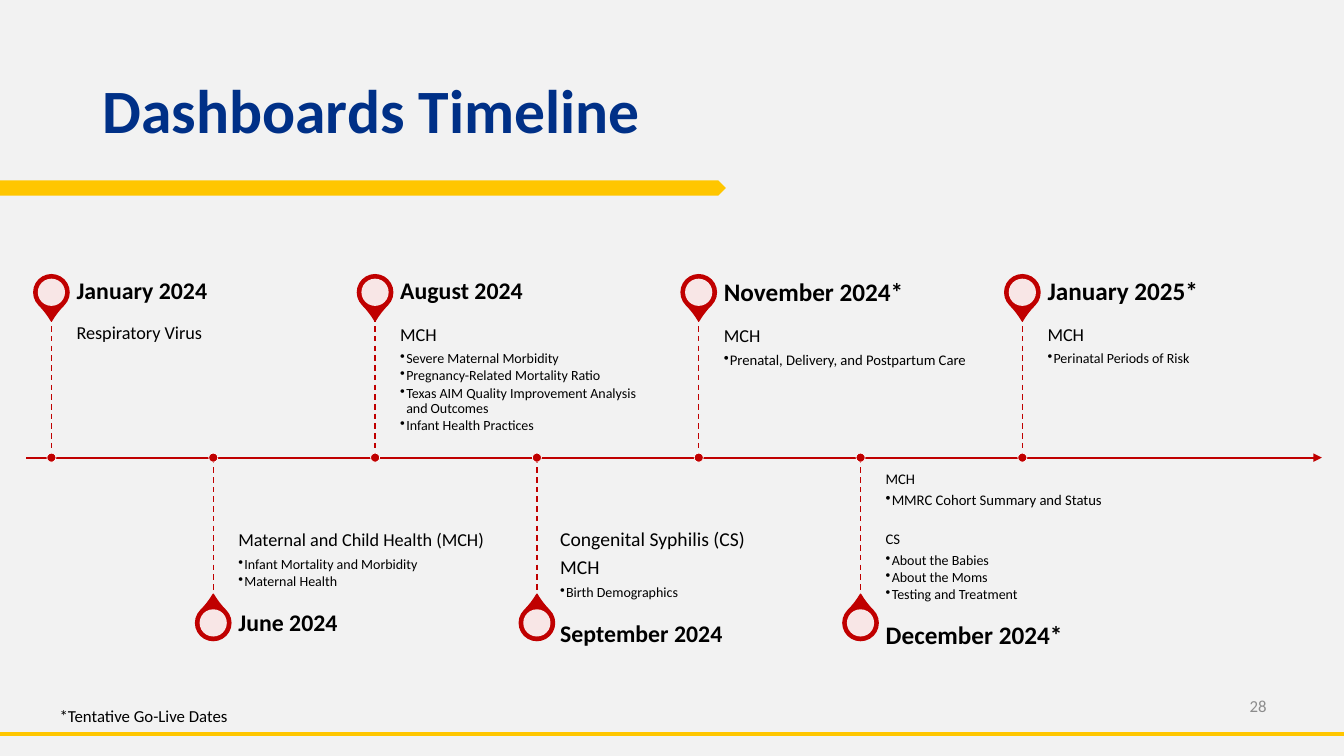
"""Build the Dashboards Timeline slide."""
import pptx
import pptx.util
import pptx.dml.color
import pptx.enum.dml
import pptx.enum.shapes
import pptx.enum.text
import pptx.oxml
import pptx.oxml.ns
from dataclasses import dataclass
from lxml import etree

Inches = pptx.util.Inches
Pt = pptx.util.Pt
RGBColor = pptx.dml.color.RGBColor
Shape = pptx.enum.shapes.MSO_SHAPE
Anchor = pptx.enum.text.MSO_ANCHOR
Align = pptx.enum.text.PP_ALIGN
qn = pptx.oxml.ns.qn


@dataclass(frozen=True)
class Theme:
    font: str = "Calibri"
    background: str = "F2F2F2"
    gold: str = "FFC600"
    navy: str = "003087"
    red: str = "C00000"
    white: str = "FFFFFF"
    black: str = "000000"
    gray: str = "8C8C8C"
    title: float = 44
    date: float = 17
    late_date: float = 18
    large_topic: float = 14
    topic: float = 13
    note: float = 12
    small_topic: float = 10.5
    detail: float = 10


theme = Theme()
deck = pptx.Presentation()
deck.slide_width, deck.slide_height = Inches(13.33), Inches(7.5)
slide = deck.slides.add_slide(deck.slide_layouts[6])
slide.background.fill.solid()
slide.background.fill.fore_color.rgb = RGBColor.from_string(theme.background)


def add_line(start, end, color, width):
    line = slide.shapes.add_connector(
        pptx.enum.shapes.MSO_CONNECTOR.STRAIGHT, *map(Inches, start + end))
    line.line.color.rgb = RGBColor.from_string(color)
    line.line.width = Pt(width)
    etree.SubElement(line._element.spPr, qn("a:effectLst"))
    return line


def add_text(box, rows, anchor=Anchor.MIDDLE, insets=(0.1, 0.05, 0.1, 0.05),
             color=theme.black, bold=False, align=Align.LEFT, spacing=0.9):
    frame = slide.shapes.add_textbox(*map(Inches, box)).text_frame
    frame.word_wrap = True
    frame.vertical_anchor = anchor
    (frame.margin_left, frame.margin_top,
     frame.margin_right, frame.margin_bottom) = map(Inches, insets)
    for index, (text, size, bulleted, gap) in enumerate(rows):
        paragraph = frame.paragraphs[0] if index == 0 else frame.add_paragraph()
        paragraph.text = text
        paragraph.alignment = align
        paragraph.line_spacing = spacing
        paragraph.space_before = Pt(gap)
        paragraph.space_after = Pt(round(size * (0.15 if bulleted else 0.35), 1))
        if bulleted:
            properties = paragraph._p.get_or_add_pPr()
            properties.set("marL", str(Inches(0.06)))
            properties.set("indent", str(-Inches(0.06)))
            etree.SubElement(properties, qn("a:buChar"), char="•")
        paragraph.font.name = theme.font
        paragraph.font.size = Pt(size)
        paragraph.font.bold = bold
        paragraph.font.color.rgb = RGBColor.from_string(color)


add_line((0, 7.28), (13.33, 7.28), theme.gold, 3)
title_bar = slide.shapes.add_shape(
    Shape.PENTAGON, Inches(0), Inches(1.79), Inches(7.2), Inches(0.15))
title_bar.shadow.inherit = False
title_bar.fill.solid()
title_bar.fill.fore_color.rgb = RGBColor.from_string(theme.gold)
title_bar.line.fill.background()
add_text((12.18, 6.8, 0.48, 0.4), [("28", theme.note, False, 0)],
         color=theme.gray, align=Align.RIGHT, spacing=1)
add_text((0.92, 0.4, 11.5, 1.45), [("Dashboards Timeline", theme.title, False, 0)],
         color=theme.navy, bold=True)

axis_y = 4.54
axis = add_line((0.26, axis_y), (13.11, axis_y), theme.red, 1.5)
etree.SubElement(axis.line._get_or_add_ln(), qn("a:tailEnd"), type="triangle")

milestones = [
    ("January 2024", theme.date, 0.25, 0,
     [("Respiratory Virus", theme.topic, False, 0)]),
    ("June 2024", theme.date, 0.25, 0,
     [("Maternal and Child Health (MCH)", theme.topic, False, 0),
      ("Infant Mortality and Morbidity", theme.detail, True, 0),
      ("Maternal Health", theme.detail, True, 0)]),
    ("August 2024", theme.date, 0.25, 0,
     [("MCH", theme.topic, False, 0),
      ("Severe Maternal Morbidity", theme.detail, True, 0),
      ("Pregnancy-Related Mortality Ratio", theme.detail, True, 0),
      ("Texas AIM Quality Improvement Analysis and Outcomes", theme.detail, True, 0),
      ("Infant Health Practices", theme.detail, True, 0)]),
    ("September 2024", theme.date, 0.23, 0.11,
     [("Congenital Syphilis (CS)", theme.large_topic, False, 0),
      ("MCH", theme.large_topic, False, 0),
      ("Birth Demographics", theme.detail, True, 0)]),
    ("November 2024*", theme.late_date, 0.25, 0.01,
     [("MCH", theme.topic, False, 0),
      ("Prenatal, Delivery, and Postpartum Care", theme.small_topic, True, 0)]),
    ("December 2024*", theme.late_date, 0.25, 0.13,
     [("MCH", theme.small_topic, False, 0),
      ("MMRC Cohort Summary and Status", theme.small_topic, True, 0),
      ("CS", theme.small_topic, False, 15),
      ("About the Babies", theme.detail, True, 0),
      ("About the Moms", theme.detail, True, 0),
      ("Testing and Treatment", theme.detail, True, 0)]),
    ("January 2025*", theme.late_date, 0.25, 0,
     [("MCH", theme.topic, False, 0),
      ("Perinatal Periods of Risk", theme.detail, True, 0)]),
]
first_x, last_x = 0.51, 10.14
step = (last_x - first_x) / (len(milestones) - 1)
stem = 1.4

for index, (date, date_size, indent, drop, topics) in enumerate(milestones):
    x = first_x + index * step
    above = index % 2 == 0
    stem_end = axis_y - stem if above else axis_y + stem
    pin_y = 2.9 if above else 6.18
    topics_y = (axis_y - stem if above else axis_y) + drop
    date_y = topics_y - 0.49 if above else topics_y + stem

    stem_line = add_line((x, min(axis_y, stem_end)), (x, max(axis_y, stem_end)), theme.red, 1)
    stem_line.line.dash_style = pptx.enum.dml.MSO_LINE.DASH
    for kind, y, size, fill, outline, width in [
            (Shape.TEAR, pin_y, 0.35, theme.red, theme.red, 1),
            (Shape.OVAL, pin_y, 0.27, theme.white, None, 0),
            (Shape.OVAL, axis_y, 0.09, theme.red, theme.white, 0.5)]:
        marker = slide.shapes.add_shape(
            kind, Inches(x - size / 2), Inches(y - size / 2), Inches(size), Inches(size))
        marker.shadow.inherit = False
        marker.fill.solid()
        marker.fill.fore_color.rgb = RGBColor.from_string(fill)
        if outline:
            marker.line.color.rgb = RGBColor.from_string(outline)
            marker.line.width = Pt(width)
        else:
            marker.line.fill.background()
            tint = marker._element.spPr.find(qn("a:solidFill"))[0]
            etree.SubElement(tint, qn("a:alpha"), val="90000")
        if kind == Shape.TEAR:
            marker.adjustments[0] = 1.15
            marker.rotation = 135 if above else 315

    add_text((x + indent, topics_y, 2.67, stem), topics,
             anchor=Anchor.TOP if above else Anchor.BOTTOM,
             insets=(0, 0.09, 0.09, 0.14) if above else (0, 0.14, 0, 0.09))
    add_text((x + indent, date_y, 2.67, 0.49), [(date, date_size, False, 0)],
             insets=(0, 0, 0.12, 0), bold=True)

add_text((0.36, 6.95, 2.13, 0.3), [("*Tentative Go-Live Dates", theme.note, False, 0)],
         anchor=Anchor.TOP, align=Align.CENTER, spacing=1)
deck.save("out.pptx")
